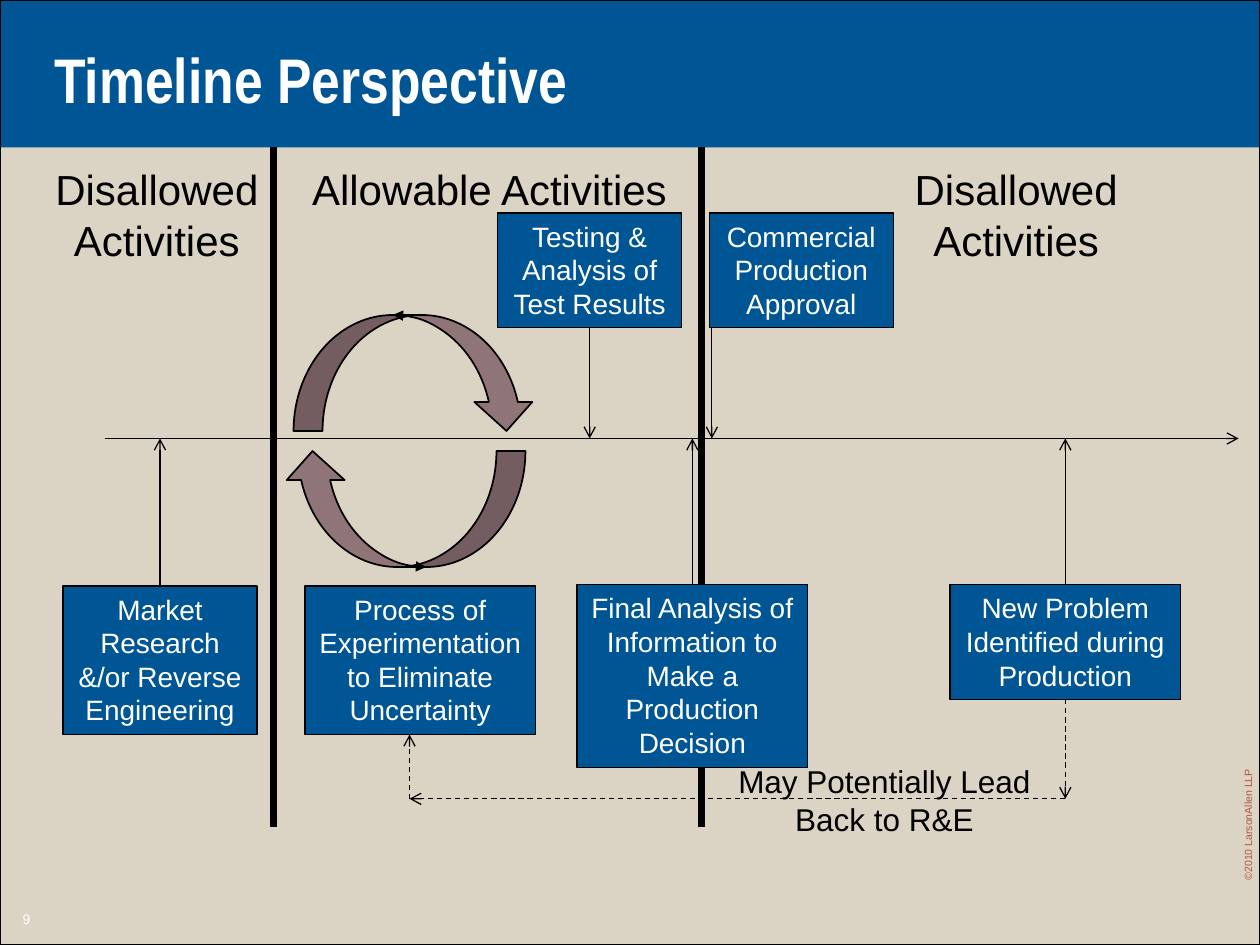
import pptx
import pptx.util
import pptx.dml.color
import pptx.enum.dml
import pptx.enum.shapes
import pptx.enum.text
import pptx.oxml.ns
from lxml import etree

Inches, Pt = pptx.util.Inches, pptx.util.Pt
Shape = pptx.enum.shapes.MSO_SHAPE
Align = pptx.enum.text.PP_ALIGN
Anchor = pptx.enum.text.MSO_ANCHOR

WIDTH, HEIGHT = 10, 7.5
BLUE, SAND, MAUVE, RUST = "005595", "DBD4C5", "907578", "B55341"
BLACK, WHITE = "000000", "FFFFFF"

BAND_BOTTOM, DIVIDER_BOTTOM = 1.17, 6.56
DIVIDERS = [2.17, 5.57]
AXIS_START, AXIS_END, AXIS_Y = 0.83, 9.83, 3.48
LOOP_Y, LOOP_X = 6.34, 3.25
UPPER_TOP, LOWER_TOP = 1.69, 4.64
TOP, BOTTOM = 0, 2

# name: text, left, top, width, height, side joined to the timeline
STAGES = {
    "market": ("Market Research &/or Reverse Engineering", 0.5, LOWER_TOP + 0.01, 1.54, 1.18, TOP),
    "experiment": ("Process of Experimentation to Eliminate Uncertainty", 2.42, LOWER_TOP + 0.01, 1.83, 1.18, None),
    "decision": ("Final Analysis of Information to Make a Production Decision", 4.58, LOWER_TOP, 1.83, 1.45, TOP),
    "approval": ("Commercial Production Approval", 5.63, UPPER_TOP, 1.46, 0.91, None),
    "problem": ("New Problem Identified during Production", 7.54, LOWER_TOP, 1.83, 0.91, TOP),
    "testing": ("Testing & Analysis of Test Results", 3.95, UPPER_TOP, 1.46, 0.91, BOTTOM),
}
# lines, left, top, width, height, size, wrap
CAPTIONS = [
    (["Disallowed", "Activities"], 0.33, 1.25, 1.83, 0.91, 24, False),
    (["Disallowed", "Activities"], 7.15, 1.25, 1.83, 0.91, 24, False),
    (["Allowable Activities"], 2.3, 1.25, 3.17, 0.5, 24, True),
    (["May Potentially Lead", "Back to R&E"], 5.75, 6, 2.54, 0.71, 18, False),
]
# left, top, rotation
CYCLE = [(2.33, 2.5, 0), (2.25, 3.58, 180)]


def rgb(value):
    return pptx.dml.color.RGBColor.from_string(value)


def add_head(line, kind):
    head = etree.SubElement(line._get_or_add_ln(), pptx.oxml.ns.qn("a:tailEnd"))
    head.set("type", kind)


def add_shape(slide, kind, left, top, width, height, fill=None, line_width=None):
    shape = slide.shapes.add_shape(kind, Inches(left), Inches(top), Inches(width), Inches(height))
    shape.shadow.inherit = False
    if fill:
        shape.fill.solid()
        shape.fill.fore_color.rgb = rgb(fill)
    else:
        shape.fill.background()
    if line_width:
        shape.line.color.rgb = rgb(BLACK)
        shape.line.width = Pt(line_width)
    else:
        shape.line.fill.background()
    return shape


def add_line(slide, start, end, width=0.75, dashed=False, arrow=True):
    line = slide.shapes.add_connector(
        pptx.enum.shapes.MSO_CONNECTOR.STRAIGHT, *map(Inches, start + end))
    line.line.color.rgb = rgb(BLACK)
    line.line.width = Pt(width)
    if dashed:
        line.line.dash_style = pptx.enum.dml.MSO_LINE.DASH
    if arrow:
        add_head(line.line, "arrow")
    etree.SubElement(line._element.spPr, pptx.oxml.ns.qn("a:effectLst"))
    return line


def write(frame, lines, size, color, align=Align.CENTER, font="Arial", bold=False, wrap=True):
    frame.word_wrap = wrap
    for number, text in enumerate(lines):
        paragraph = frame.add_paragraph() if number else frame.paragraphs[0]
        paragraph.text = text
        paragraph.alignment = align
        paragraph.font.name = font
        paragraph.font.size = Pt(size)
        paragraph.font.bold = bold
        paragraph.font.color.rgb = rgb(color)


def add_text(slide, lines, left, top, width, height, size, wrap=True, color=BLACK, align=Align.CENTER):
    box = slide.shapes.add_textbox(Inches(left), Inches(top), Inches(width), Inches(height))
    write(box.text_frame, lines, size, color, align, wrap=wrap)
    return box


def add_title(slide, text):
    title = slide.shapes.title
    title.left, title.top, title.width, title.height = map(Inches, (0.33, 0, 9, 1.25))
    title.text_frame.vertical_anchor = Anchor.MIDDLE
    write(title.text_frame, [text], 36, WHITE, Align.LEFT, "Arial Narrow", True)
    slide.shapes._spTree.append(title._element)  # in front of the band


def main():
    deck = pptx.Presentation()
    deck.slide_width, deck.slide_height = Inches(WIDTH), Inches(HEIGHT)
    slide = deck.slides.add_slide(deck.slide_layouts[5])
    slide.background.fill.solid()
    slide.background.fill.fore_color.rgb = rgb(SAND)

    add_shape(slide, Shape.RECTANGLE, 0, 0, WIDTH, BAND_BOTTOM, BLUE)
    add_shape(slide, Shape.RECTANGLE, 0, 0, WIDTH, HEIGHT, line_width=0.75)
    add_title(slide, "Timeline Perspective")
    rights = add_text(slide, ["©2010 LarsonAllen LLP"], 9.32, 6.4, 1.17, 0.2, 6,
                      color=RUST, align=Align.LEFT)
    rights.rotation = 270
    add_text(slide, ["9"], 0, 7.18, 0.42, 0.23, 8, color=WHITE)

    for x in DIVIDERS:
        add_line(slide, (x, BAND_BOTTOM), (x, DIVIDER_BOTTOM), 4, arrow=False)
    add_line(slide, (AXIS_START, AXIS_Y), (AXIS_END, AXIS_Y))

    for left, top, rotation in CYCLE:
        arrow = add_shape(slide, Shape.CURVED_DOWN_ARROW, left, top, 1.92, 0.92, MAUVE, 1)
        arrow.rotation = rotation
        add_head(arrow.line, "triangle")

    boxes = {}
    for name, (text, left, top, width, height, side) in STAGES.items():
        box = add_shape(slide, Shape.RECTANGLE, left, top, width, height, BLUE, 0.75)
        box.text_frame.vertical_anchor = Anchor.TOP
        write(box.text_frame, [text], 16, WHITE)
        boxes[name] = box
        if side is not None:
            x = left + width / 2
            y = top if side == TOP else top + height
            add_line(slide, (x, y), (x, AXIS_Y)).begin_connect(box, side)

    approval, problem = boxes["approval"], boxes["problem"]
    approval_x = approval.left.inches + 0.02
    add_line(slide, (approval_x, (approval.top + approval.height) / Inches(1)), (approval_x, AXIS_Y))

    problem_x = (problem.left + problem.width / 2) / Inches(1)
    problem_bottom = (problem.top + problem.height) / Inches(1)
    down = add_line(slide, (problem_x, problem_bottom), (problem_x, LOOP_Y), dashed=True)
    down.begin_connect(problem, BOTTOM)
    add_line(slide, (problem_x, LOOP_Y), (LOOP_X, LOOP_Y), dashed=True)
    experiment = boxes["experiment"]
    add_line(slide, (LOOP_X, LOOP_Y),
             (LOOP_X, (experiment.top + experiment.height) / Inches(1)), dashed=True)

    for caption in CAPTIONS:
        add_text(slide, *caption)
    deck.save("out.pptx")


if __name__ == "__main__":
    main()
